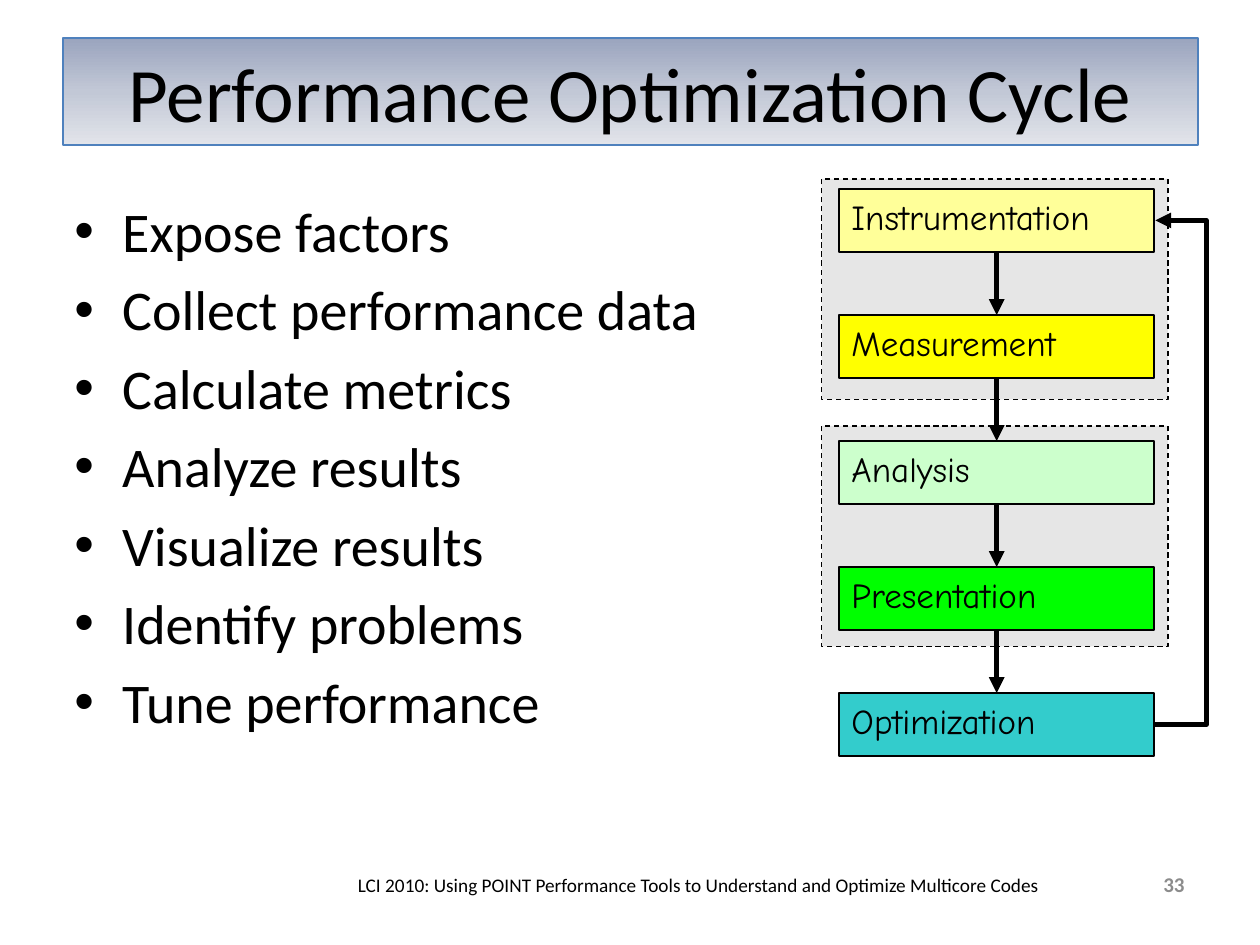
from copy import deepcopy
from pptx import Presentation
from pptx.dml.color import RGBColor
from pptx.enum.dml import MSO_LINE
from pptx.enum.shapes import MSO_CONNECTOR, MSO_SHAPE
from pptx.enum.text import MSO_ANCHOR, MSO_AUTO_SIZE, PP_ALIGN
from pptx.oxml.ns import qn
from pptx.oxml.xmlchemy import OxmlElement
from pptx.util import Inches, Pt

COLORS = {
    "black": "000000", "group": "E6E6E6", "number": "8C8C8C",
    "title_top": "9AA4BE", "title_middle": "C2C8D6",
    "title_bottom": "E2E4EA", "title_line": "4F81BD",
    "instrumentation": "FFFF99", "measurement": "FFFF00",
    "analysis": "CCFFCC", "presentation": "00FF00", "optimization": "33CCCC",
}


def add_text(paragraph, text, size, color="black", font="Calibri", bold=False):
    run = paragraph.add_run()
    run.text = text
    run.font.size = Pt(size)
    run.font.name = font
    run.font.bold = bold
    run.font.color.rgb = RGBColor.from_string(COLORS[color])


def style_arrow(connector):
    """Make a connector a thick black arrow without a shadow."""
    connector.line.width = Pt(3)
    connector.line.color.rgb = RGBColor.from_string(COLORS["black"])
    head = OxmlElement("a:tailEnd")
    head.set("type", "triangle")
    connector.line._get_or_add_ln().append(head)
    connector._element.spPr.append(OxmlElement("a:effectLst"))


prs = Presentation()
prs.slide_width, prs.slide_height = Inches(10), Inches(7.5)
slide = prs.slides.add_slide(prs.slide_layouts[1])
shapes = slide.shapes

# Title on a gradient band
title = shapes.title
title.left, title.top = Inches(0.5), Inches(0.3)
title.width, title.height = Inches(9.01), Inches(0.85)
title.fill.gradient()
title.fill.gradient_angle = 270
first_stop = title._element.find(".//" + qn("a:gsLst"))[0]
first_stop.addnext(deepcopy(first_stop))
for stop, position, name in zip(title.fill.gradient_stops, (0, 0.5, 1),
                                ("title_top", "title_middle", "title_bottom")):
    stop.position = position
    stop.color.rgb = RGBColor.from_string(COLORS[name])
title.line.color.rgb = RGBColor.from_string(COLORS["title_line"])
title.line.width = Pt(1)
title.text_frame.auto_size = MSO_AUTO_SIZE.NONE
title.text_frame.vertical_anchor = MSO_ANCHOR.MIDDLE
title.text_frame.paragraphs[0].alignment = PP_ALIGN.CENTER
add_text(title.text_frame.paragraphs[0], "Performance Optimization Cycle", 44)

# Steps of the cycle
steps = slide.placeholders[1]
steps.left, steps.top = Inches(0.49), Inches(1.51)
steps.width, steps.height = Inches(9.02), Inches(4.95)
steps.text_frame.auto_size = MSO_AUTO_SIZE.NONE
for i, step in enumerate((
        "Expose factors", "Collect performance data", "Calculate metrics",
        "Analyze results", "Visualize results", "Identify problems",
        "Tune performance")):
    if i == 0:
        paragraph = steps.text_frame.paragraphs[0]
        paragraph.space_before = Pt(0)
    else:
        paragraph = steps.text_frame.add_paragraph()
    properties = paragraph._p.get_or_add_pPr()
    properties.set("marL", str(Inches(0.38)))
    properties.set("indent", str(-Inches(0.38)))
    bullet = OxmlElement("a:buChar")
    bullet.set("char", "•")
    properties.append(bullet)
    add_text(paragraph, step, 32)

# Dashed groups behind the stages
for top in (1.42, 3.38):
    group = shapes.add_shape(MSO_SHAPE.RECTANGLE, Inches(6.52), Inches(top),
                             Inches(2.75), Inches(1.75))
    group.shadow.inherit = False
    group.fill.solid()
    group.fill.fore_color.rgb = RGBColor.from_string(COLORS["group"])
    group.line.color.rgb = RGBColor.from_string(COLORS["black"])
    group.line.width = Pt(0.75)
    group.line.dash_style = MSO_LINE.DASH

# Stages, one inch apart
stages = []
for i, name in enumerate(("Instrumentation", "Measurement", "Analysis",
                          "Presentation", "Optimization")):
    stage = shapes.add_shape(MSO_SHAPE.RECTANGLE, Inches(6.66), Inches(1.5 + i),
                             Inches(2.5), Inches(0.5))
    stage.shadow.inherit = False
    stage.fill.solid()
    stage.fill.fore_color.rgb = RGBColor.from_string(COLORS[name.lower()])
    stage.line.color.rgb = RGBColor.from_string(COLORS["black"])
    stage.line.width = Pt(1)
    stage.text_frame.vertical_anchor = MSO_ANCHOR.TOP
    stage.text_frame.paragraphs[0].alignment = PP_ALIGN.LEFT
    add_text(stage.text_frame.paragraphs[0], name, 20, font="Comic Neue")
    stages.append(stage)

for upper, lower in zip(stages, stages[1:]):
    arrow = shapes.add_connector(MSO_CONNECTOR.STRAIGHT, 0, 0, 0, 0)
    arrow.begin_connect(upper, 2)
    arrow.end_connect(lower, 0)
    style_arrow(arrow)

# Feedback from the last stage to the first, bending 0.42 inch to the right
feedback = shapes.add_connector(MSO_CONNECTOR.ELBOW, Inches(9.16), Inches(5.75),
                                Inches(9.17), Inches(1.75))
bend = OxmlElement("a:gd")
bend.set("name", "adj1")
bend.set("fmla", "val 4200000")
feedback._element.spPr.prstGeom.get_or_add_avLst().append(bend)
style_arrow(feedback)

# Footer and slide number
for left, top, width, height, align, text, size, color, bold in (
        (2.62, 6.88, 5.85, 0.29, PP_ALIGN.CENTER,
         "LCI 2010: Using POINT Performance Tools to Understand and Optimize "
         "Multicore Codes", 11, "black", False),
        (9, 6.93, 0.5, 0.17, PP_ALIGN.RIGHT, "33", 12, "number", True)):
    footer = shapes.add_textbox(Inches(left), Inches(top),
                                Inches(width), Inches(height))
    footer.text_frame.word_wrap = True
    footer.text_frame.vertical_anchor = MSO_ANCHOR.MIDDLE
    footer.text_frame.paragraphs[0].alignment = align
    add_text(footer.text_frame.paragraphs[0], text, size, color, bold=bold)

prs.save("out.pptx")
